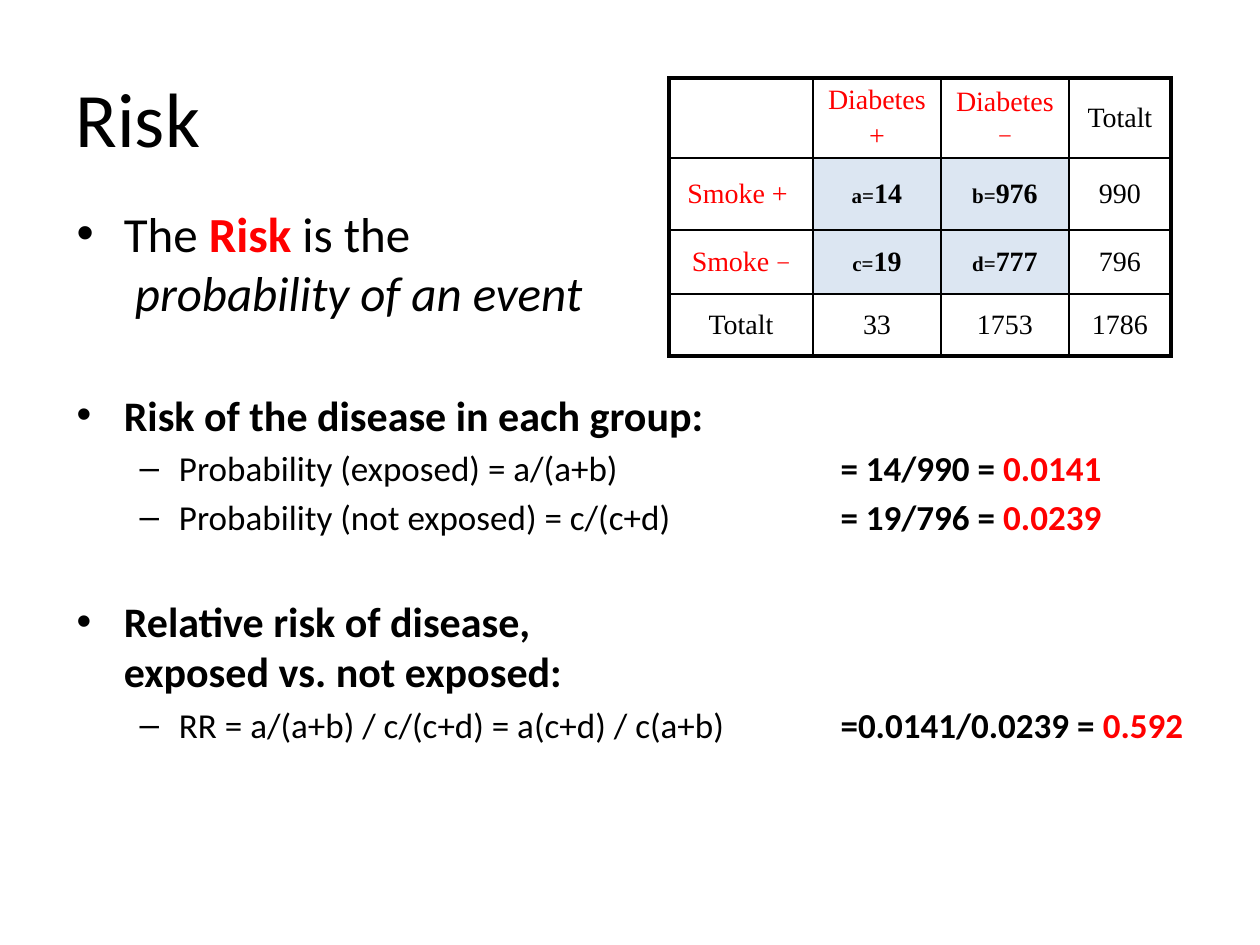
from dataclasses import dataclass

from lxml.etree import SubElement
from pptx import Presentation
from pptx.dml.color import RGBColor
from pptx.enum.text import MSO_ANCHOR as Anchor, MSO_AUTO_SIZE as AutoSize, PP_ALIGN as Align
from pptx.oxml.ns import qn
from pptx.util import Emu, Pt

EMU_PER_PX = 914400 // 126
COLORS = {"ink": "000000", "accent": "FF0000", "plain": "FFFFFF", "counts": "DCE6F2"}
VALUE_TAB = 764
COLUMN_WIDTHS = (144, 128, 128, 102)
ROW_HEIGHTS = (80, 72, 64, 62)


@dataclass(frozen=True)
class Span:
    text: str
    color: str = "ink"
    bold: bool = False
    italic: bool = False
    size: int | None = None


@dataclass(frozen=True)
class Point:
    spans: tuple[Span, ...]
    size: int
    level: int = 0
    gap: int | None = None


@dataclass(frozen=True)
class Entry:
    lines: tuple[tuple[Span, ...], ...]
    fill: str = "plain"


def px(length: int) -> Emu:
    return Emu(length * EMU_PER_PX)


def rgb(name: str) -> RGBColor:
    return RGBColor.from_string(COLORS[name])


def place(shape, left: int, top: int, width: int, height: int) -> None:
    shape.left, shape.top, shape.width, shape.height = map(px, (left, top, width, height))


def write(paragraph, spans: tuple[Span, ...], size: int, font_name: str) -> None:
    paragraph.font.name = font_name
    paragraph.font.size = Pt(size)
    for span in spans:
        for index, line in enumerate(span.text.split("\n")):
            if index:
                paragraph.add_line_break()
            run = paragraph.add_run()
            run.text = line
            run.font.color.rgb = rgb(span.color)
            run.font.bold = span.bold
            run.font.italic = span.italic
            if span.size:
                run.font.size = Pt(span.size)


def add_value_tab(paragraph) -> None:
    properties = paragraph._p.get_or_add_pPr()
    tabs = properties.makeelement(qn("a:tabLst"))
    SubElement(tabs, qn("a:tab"), pos=str(px(VALUE_TAB)), algn="l")
    properties.find(qn("a:defRPr")).addprevious(tabs)


def write_points(frame, points: list[Point]) -> None:
    for index, point in enumerate(points):
        paragraph = frame.add_paragraph() if index else frame.paragraphs[0]
        paragraph.level = point.level
        if point.gap:
            paragraph.space_before = Pt(point.gap)
        write(paragraph, point.spans, point.size, "Calibri")
        if point.level:
            add_value_tab(paragraph)


def set_border(cell, side: str, width: float) -> None:
    line = SubElement(cell._tc.get_or_add_tcPr(), qn(f"a:ln{side}"), w=str(Pt(width)))
    fill = SubElement(line, qn("a:solidFill"))
    SubElement(fill, qn("a:srgbClr"), val=COLORS["ink"])


def write_cell(cell, entry: Entry, outer_sides: str) -> None:
    for side in "LRTB":
        set_border(cell, side, 2.25 if side in outer_sides else 1)
    cell.fill.solid()
    cell.fill.fore_color.rgb = rgb(entry.fill)
    cell.vertical_anchor = Anchor.MIDDLE
    cell.margin_top = cell.margin_bottom = 0
    for index, spans in enumerate(entry.lines):
        paragraph = cell.text_frame.add_paragraph() if index else cell.text_frame.paragraphs[0]
        paragraph.alignment = Align.CENTER
        paragraph.space_before = Pt(3)
        write(paragraph, spans, 16, "Times New Roman")


def add_counts_table(slide, left: int, top: int, entries: list[list[Entry]]) -> None:
    table = slide.shapes.add_table(
        len(ROW_HEIGHTS), len(COLUMN_WIDTHS), px(left), px(top),
        px(sum(COLUMN_WIDTHS)), px(sum(ROW_HEIGHTS)),
    ).table
    table.first_row = table.horz_banding = False
    for column, width in zip(table.columns, COLUMN_WIDTHS):
        column.width = px(width)
    for row, height in zip(table.rows, ROW_HEIGHTS):
        row.height = px(height)
    last_row, last_column = len(ROW_HEIGHTS) - 1, len(COLUMN_WIDTHS) - 1
    for r, row_entries in enumerate(entries):
        for c, entry in enumerate(row_entries):
            edges = {"T": r == 0, "B": r == last_row, "L": c == 0, "R": c == last_column}
            outer_sides = "".join(side for side, outer in edges.items() if outer)
            write_cell(table.cell(r, c), entry, outer_sides)


def total(text: str) -> Entry:
    return Entry(((Span(text),),))


def count(letter: str, value: str) -> Entry:
    return Entry(((Span(f"{letter}=", bold=True, size=12), Span(value, bold=True)),), "counts")


def result(formula: str, calculation: str, value: str) -> Point:
    spans = (Span(f"{formula}\t"), Span(calculation, bold=True), Span(value, "accent", bold=True))
    return Point(spans, 20, level=1)


def main() -> None:
    presentation = Presentation()
    presentation.slide_width, presentation.slide_height = px(1260), px(945)
    slide = presentation.slides.add_slide(presentation.slide_layouts[1])

    title = slide.shapes.title
    place(title, 63, 38, 1134, 158)
    title.text_frame.vertical_anchor = Anchor.MIDDLE
    heading = title.text_frame.paragraphs[0]
    heading.alignment = Align.LEFT
    write(heading, (Span("Risk"),), 44, "Calibri")

    minus = Span("−", "accent", size=14)
    diabetes = (Span("Diabetes", "accent"),)
    add_counts_table(slide, 669, 78, [
        [Entry(((),)), Entry((diabetes, (Span("+", "accent"),))),
         Entry((diabetes, (minus,))), total("Totalt")],
        [Entry(((Span("Smoke + ", "accent"),),)), count("a", "14"), count("b", "976"), total("990")],
        [Entry(((Span("Smoke ", "accent"), minus),)), count("c", "19"), count("d", "777"), total("796")],
        [total(text) for text in ("Totalt", "33", "1753", "1786")],
    ])

    body = slide.placeholders[1]
    place(body, 64, 197, 1143, 624)
    body.text_frame.auto_size = AutoSize.NONE
    write_points(body.text_frame, [
        Point((Span("The "), Span("Risk", "accent", bold=True), Span(" is the\n "),
               Span("probability of an event", italic=True)), 28),
        Point((Span("Risk of the disease in each group:", bold=True),), 24, gap=39),
        result("Probability (exposed) = a/(a+b)", "= 14/990 = ", "0.0141"),
        result("Probability (not exposed) = c/(c+d)", "= 19/796 = ", "0.0239"),
        Point((Span("Relative risk of disease,\nexposed vs. not exposed:", bold=True),), 24, gap=33),
        result("RR = a/(a+b) / c/(c+d) = a(c+d) / c(a+b)", "=0.0141/0.0239 = ", "0.592"),
    ])
    presentation.save("out.pptx")


if __name__ == "__main__":
    main()
